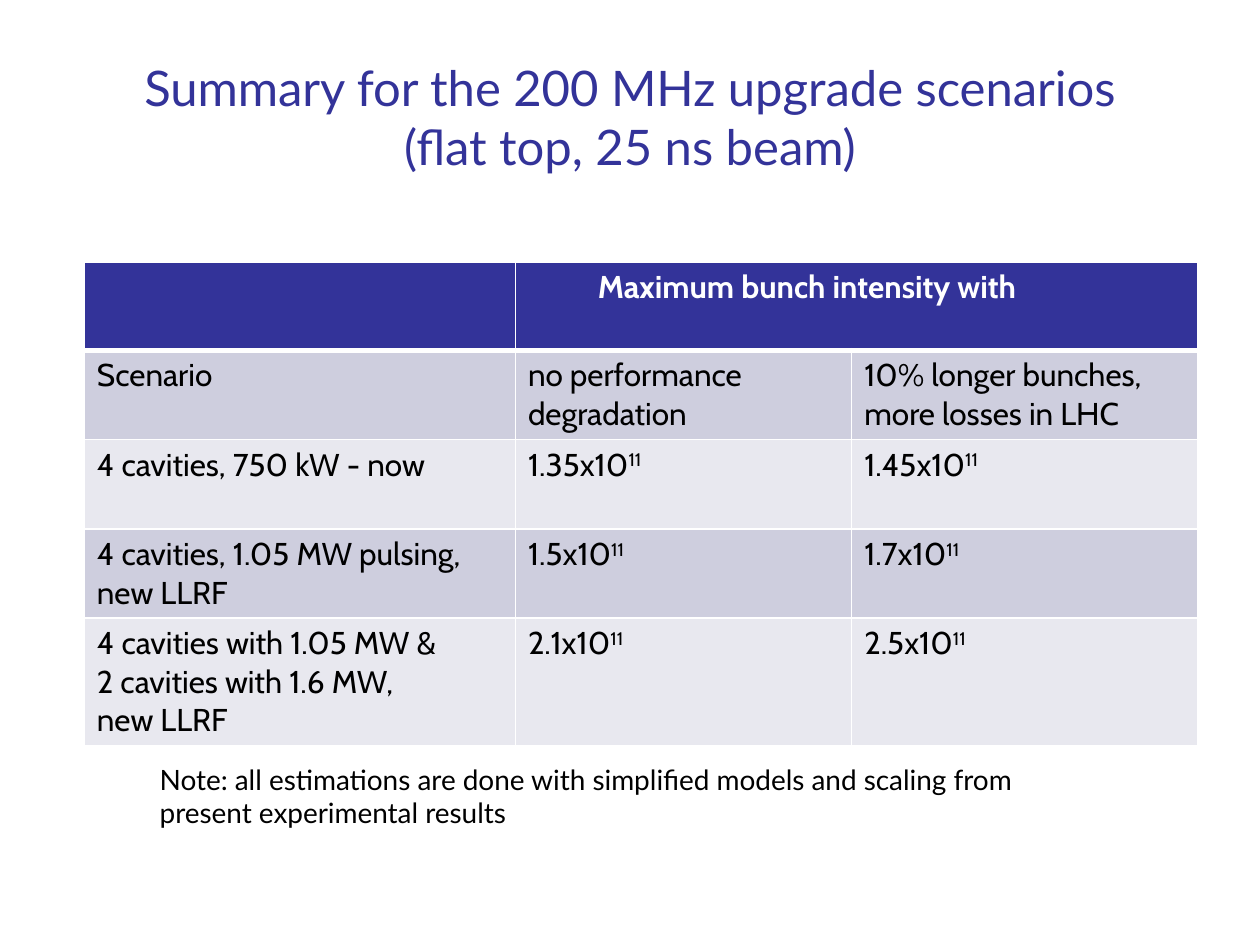
from dataclasses import dataclass

from lxml.etree import SubElement
from pptx import Presentation
from pptx.dml.color import RGBColor
from pptx.enum.text import MSO_ANCHOR, PP_ALIGN
from pptx.oxml.ns import qn
from pptx.util import Cm, Pt


@dataclass(frozen=True)
class Theme:
    accent: str = "333399"
    dark_band: str = "CECEDE"
    light_band: str = "E8E8EF"
    text: str = "000000"
    white: str = "FFFFFF"
    body_font: str = "Lato"
    table_font: str = "Cabin"
    title_size: int = 28
    table_size: int = 18
    note_size: int = 16


T = Theme()
COLUMNS = [8.69, 6.78, 6.98]
ROWS = [1.78, 1.8, 1.8, 1.8, 2.57]
CONTENT = [
    ["", "Maximum bunch intensity with", ""],
    ["Scenario", "no performance\ndegradation", "10% longer bunches,\nmore losses in LHC"],
    ["4 cavities, 750 kW - now", "1.35x10^11", "1.45x10^11"],
    ["4 cavities, 1.05 MW pulsing,\nnew LLRF", "1.5x10^11", "1.7x10^11"],
    ["4 cavities with 1.05 MW &\n2 cavities with 1.6 MW,\nnew LLRF", "2.1x10^11", "2.5x10^11"],
]


def write_text(tf, text, *, font, size, color=T.text, bold=False, align=PP_ALIGN.LEFT):
    for i, line in enumerate(text.split("\n")):
        p = tf.paragraphs[0] if i == 0 else tf.add_paragraph()
        p.alignment = align
        p.font.size = Pt(size)
        for j, part in enumerate(line.split("^")):
            if not part:
                continue
            r = p.add_run()
            r.text = part
            r.font.name = font
            r.font.size = Pt(size)
            r.font.bold = bold
            r.font.color.rgb = RGBColor.from_string(color)
            if j:
                r._r.get_or_add_rPr().set("baseline", "30000")


def add_text(s, box, text, *, anchor=MSO_ANCHOR.TOP, **fmt):
    tf = s.shapes.add_textbox(*map(Cm, box)).text_frame
    tf.word_wrap = True
    tf.vertical_anchor = anchor
    write_text(tf, text, **fmt)


def style_cell(cell, fill, bottom=1):
    tcPr = cell._tc.get_or_add_tcPr()
    for side, width in (("L", 1), ("R", 1), ("T", 1), ("B", bottom)):
        ln = SubElement(tcPr, qn(f"a:ln{side}"), w=str(Pt(width)))
        SubElement(SubElement(ln, qn("a:solidFill")), qn("a:srgbClr"), val=T.white)
    cell.fill.solid()
    cell.fill.fore_color.rgb = RGBColor.from_string(fill)


def add_scenario_table(s, left, top):
    box = map(Cm, (left, top, sum(COLUMNS), sum(ROWS)))
    table = s.shapes.add_table(len(ROWS), len(COLUMNS), *box).table
    for col, width in zip(table.columns, COLUMNS):
        col.width = Cm(width)
    for i, (row, height) in enumerate(zip(table.rows, ROWS)):
        row.height = Cm(height)
        header = i == 0
        fill = T.accent if header else T.dark_band if i % 2 else T.light_band
        for cell, text in zip(row.cells, CONTENT[i]):
            style_cell(cell, fill, bottom=3 if header else 1)
            write_text(cell.text_frame, text, font=T.table_font, size=T.table_size,
                       color=T.white if header else T.text, bold=header)
    heading = table.cell(0, 1)
    heading.merge(table.cell(0, 2))
    heading.margin_left = Cm(1.66)


def build_summary(s):
    add_text(s, (1.27, 0.76, 22.86, 3.18),
             "Summary for the 200 MHz upgrade scenarios\n(flat top, 25 ns beam)",
             anchor=MSO_ANCHOR.MIDDLE, align=PP_ALIGN.CENTER,
             font=T.body_font, size=T.title_size, color=T.accent)
    add_scenario_table(s, 1.7, 5.28)
    add_text(s, (2.97, 15.24, 17.78, 1.63),
             "Note: all estimations are done with simplified models and scaling from "
             "present experimental results",
             font=T.body_font, size=T.note_size)


def main():
    prs = Presentation()
    prs.slide_width, prs.slide_height = Cm(25.4), Cm(19.05)
    build_summary(prs.slides.add_slide(prs.slide_layouts[6]))
    prs.save("out.pptx")


if __name__ == "__main__":
    main()
